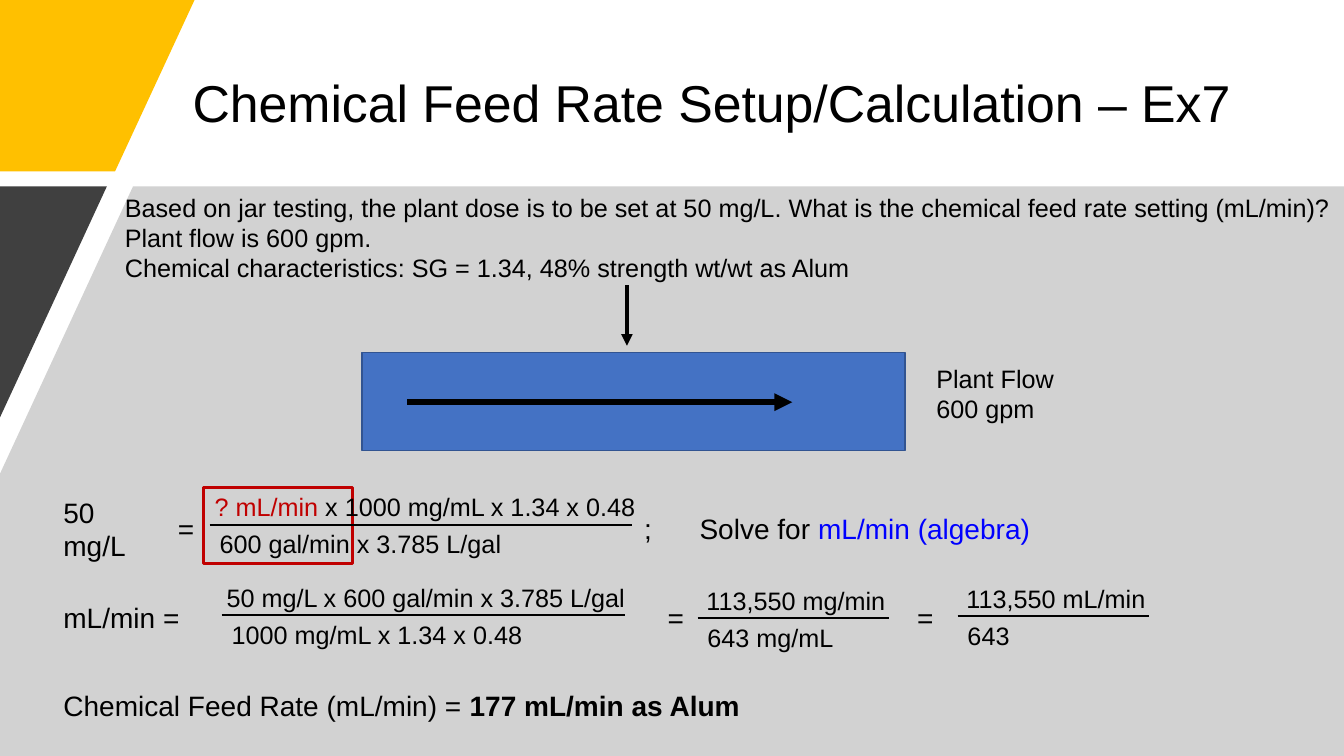
from dataclasses import dataclass

from lxml.etree import SubElement
from pptx import Presentation
from pptx.dml.color import RGBColor
from pptx.enum.shapes import MSO_CONNECTOR, MSO_SHAPE
from pptx.enum.text import MSO_ANCHOR, PP_ALIGN
from pptx.oxml.ns import qn
from pptx.util import Inches, Pt


@dataclass(frozen=True)
class Theme:
    font: str = "Arial"
    title_size: int = 37
    equation_size: int = 20
    body_size: int = 18
    ink: RGBColor = RGBColor(0, 0, 0)
    accent: RGBColor = RGBColor(0xFF, 0xC0, 0x00)
    dark: RGBColor = RGBColor(0x40, 0x40, 0x40)
    panel: RGBColor = RGBColor(0xD2, 0xD2, 0xD2)
    pipe: RGBColor = RGBColor(0x44, 0x72, 0xC4)
    pipe_edge: RGBColor = RGBColor(0x32, 0x54, 0x91)
    unknown: RGBColor = RGBColor(0xC0, 0x00, 0x00)
    goal: RGBColor = RGBColor(0x00, 0x00, 0xFF)


theme = Theme()
deck = Presentation()
deck.slide_width, deck.slide_height = Inches(13.33), Inches(7.5)
slide = deck.slides.add_slide(deck.slide_layouts[5])
shapes = slide.shapes

# Grid of 160 columns by 90 rows
COL, ROW = deck.slide_width / 160, deck.slide_height / 90


def write(col, row, cols, rows, lines, size=theme.body_size):
    """Each line is a list of (text, colour, bold) runs."""
    box = shapes.add_textbox(int(col * COL), int(row * ROW), int(cols * COL), int(rows * ROW))
    frame = box.text_frame
    frame.word_wrap = True
    frame.vertical_anchor = MSO_ANCHOR.MIDDLE
    for number, runs in enumerate(lines):
        paragraph = frame.paragraphs[0] if number == 0 else frame.add_paragraph()
        paragraph.font.name = theme.font
        paragraph.font.size = Pt(size)
        for text, colour, bold in runs:
            run = paragraph.add_run()
            run.text = text
            run.font.color.rgb = colour
            run.font.bold = bold


def rule(start, end, width, arrow=False):
    line = shapes.add_connector(MSO_CONNECTOR.STRAIGHT, int(start[0] * COL), int(start[1] * ROW),
                                int(end[0] * COL), int(end[1] * ROW))
    line.line.color.rgb = theme.ink
    line.line.width = Pt(width)
    if arrow:
        SubElement(line.line._get_or_add_ln(), qn("a:tailEnd"), type="triangle")
    SubElement(line._element.spPr, qn("a:effectLst"))


# Slanted background areas
for colour, corners in [
    (theme.accent, [(0, 0), (23.16, 0), (13.7, 20.4), (0, 20.4)]),
    (theme.panel, [(15.84, 22.2), (160, 22.2), (160, 90), (0, 90), (0, 56.4)]),
    (theme.dark, [(0, 22.2), (12.72, 22.2), (0, 49.7)]),
]:
    points = [(int(col * COL), int(row * ROW)) for col, row in corners]
    outline = shapes.build_freeform(*points[0])
    outline.add_line_segments(points[1:], close=True)
    area = outline.convert_to_shape()
    area.fill.solid()
    area.fill.fore_color.rgb = colour
    area.line.fill.background()
    area.shadow.inherit = False

# Title
title = shapes.title
title.left, title.top = int(21.72 * COL), int(4.8 * ROW)
title.width, title.height = int(132.72 * COL), int(15.6 * ROW)
title.text_frame.text = "Chemical Feed Rate Setup/Calculation – Ex7"
title.text_frame.vertical_anchor = MSO_ANCHOR.MIDDLE
heading = title.text_frame.paragraphs[0]
heading.alignment = PP_ALIGN.LEFT
heading.line_spacing = 0.9
heading.font.name = theme.font
heading.font.size = Pt(theme.title_size)
heading.font.color.rgb = theme.ink

# Problem statement
problem = [
    "Based on jar testing, the plant dose is to be set at 50 mg/L. "
    "What is the chemical feed rate setting (mL/min)?",
    "Plant flow is 600 gpm.",
    "Chemical characteristics: SG = 1.34, 48% strength wt/wt as Alum",
]
write(13.68, 22.2, 146.3, 12.12, [[(text, theme.ink, False)] for text in problem])

# Pipe, and the box round the unknown feed rate
for place, fill, edge, width in [
    ((43.08, 42, 64.68, 11.64), theme.pipe, theme.pipe_edge, 1),
    ((24.24, 58.08, 17.76, 9), None, theme.unknown, 2.25),
]:
    col, row, cols, rows = place
    frame_box = shapes.add_shape(MSO_SHAPE.RECTANGLE, int(col * COL), int(row * ROW),
                                 int(cols * COL), int(rows * ROW))
    if fill is None:
        frame_box.fill.background()
    else:
        frame_box.fill.solid()
        frame_box.fill.fore_color.rgb = fill
    frame_box.line.color.rgb = edge
    frame_box.line.width = Pt(width)
    frame_box.shadow.inherit = False

# Flow through the pipe and dose into it
rule((48.48, 47.88), (94.32, 47.88), 4.25, arrow=True)
rule((74.64, 33.96), (74.64, 41.16), 2.75, arrow=True)
write(110.28, 42.6, 21.48, 8.52,
      [[(text, theme.ink, False)] for text in ("Plant Flow", "600 gpm")])

# Working, one equation per row
FIRST_EQUATION, EQUATION_PITCH, EQUATION_ROWS = 60.55, 10.52, 4.8
equations = [
    [
        (6.36, 13, [("50 mg/L", theme.ink, False)]),
        (20, 6, [("=", theme.ink, False)]),
        (75.5, 5, [(";", theme.ink, False)]),
        (82.1, 48, [("Solve for ", theme.ink, False), ("mL/min (algebra)", theme.goal, False)]),
    ],
    [
        (6.36, 18, [("mL/min =", theme.ink, False)]),
        (78.3, 6, [("=", theme.ink, False)]),
        (108, 6, [("=", theme.ink, False)]),
    ],
    [
        (6.36, 100, [("Chemical Feed Rate (mL/min) = ", theme.ink, False),
                     ("177 mL/min as Alum", theme.ink, True)]),
    ],
]
for number, parts in enumerate(equations):
    for col, cols, runs in parts:
        write(col, FIRST_EQUATION + number * EQUATION_PITCH, cols, EQUATION_ROWS, [runs],
              theme.equation_size)

# Fractions: bar column, bar row, bar length, numerator shift, numerator, denominator
fractions = [
    (24.96, 62.45, 50.3, -0.6,
     [("? mL/min ", theme.unknown, False), ("x 1000 mg/mL x 1.34 x 0.48", theme.ink, False)],
     "600 gal/min x 3.785 L/gal"),
    (26.4, 73.2, 48, -0.6, [("50 mg/L x 600 gal/min x 3.785 L/gal", theme.ink, False)],
     "1000 mg/mL x 1.34 x 0.48"),
    (83.04, 73.56, 22.8, -0.12, [("113,550 mg/min", theme.ink, False)], "643 mg/mL"),
    (114, 73.32, 22.8, -0.12, [("113,550 mL/min", theme.ink, False)], "643"),
]
for col, row, cols, shift, numerator, denominator in fractions:
    write(col + shift, row - 4.5, cols + 3, 4.8, [numerator])
    write(col, row - 0.12, cols + 3, 4.8, [[(denominator, theme.ink, False)]])
    rule((col, row), (col + cols, row), 1.5)

deck.save("out.pptx")
